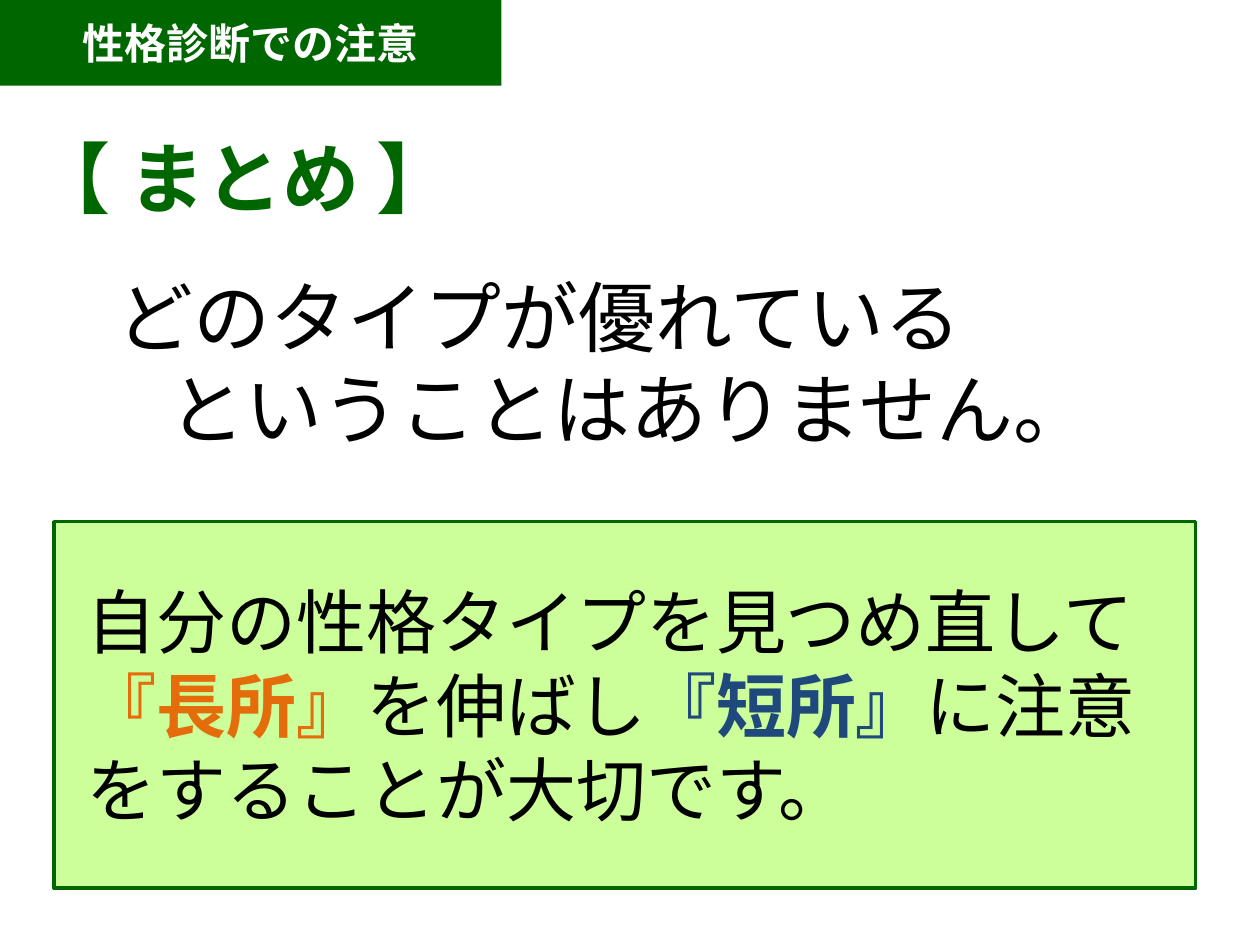
from lxml import etree
from pptx import Presentation
from pptx.dml.color import RGBColor
from pptx.enum.shapes import MSO_SHAPE
from pptx.enum.text import MSO_ANCHOR, MSO_AUTO_SIZE, PP_ALIGN
from pptx.oxml.ns import qn
from pptx.util import Inches, Pt

RECTANGLE = MSO_SHAPE.RECTANGLE
MIDDLE, TOP = MSO_ANCHOR.MIDDLE, MSO_ANCHOR.TOP
CENTER, LEFT = PP_ALIGN.CENTER, PP_ALIGN.LEFT
NO_AUTOFIT = MSO_AUTO_SIZE.NONE

FONT = "Noto Sans CJK JP"
COLORS = {
    "green": "006600",
    "pale": "CCFF99",
    "white": "FFFFFF",
    "black": "000000",
    "orange": "E46C0A",
    "blue": "1F497D",
}

# Content: each paragraph is a list of (text, color, bold)
TITLE = [[("性格診断での注意", "white", True)]]
HEADING = [[("【 まとめ 】", "green", True)]]
MESSAGE = [
    [("どのタイプが優れている", "black", False)],
    [("ということはありません。", "black", False)],
]
ADVICE = [
    [("自分の性格タイプを見つめ直して", "black", False)],
    [
        ("『長所』", "orange", True),
        ("を伸ばし", "black", False),
        ("『短所』", "blue", True),
        ("に注意をすることが大切です。", "black", False),
    ],
]


def color(name):
    return RGBColor.from_string(COLORS[name])


def place(shape, left, top, width, height):
    shape.left, shape.top = Inches(left), Inches(top)
    shape.width, shape.height = Inches(width), Inches(height)


def write(shape, paragraphs, size, align=LEFT, anchor=TOP, indents=()):
    """Fill a shape with paragraphs; indents gives left margins in inches."""
    frame = shape.text_frame
    frame.word_wrap = True
    frame.auto_size = NO_AUTOFIT
    frame.vertical_anchor = anchor
    for index, spans in enumerate(paragraphs):
        para = frame.add_paragraph() if index else frame.paragraphs[0]
        para.alignment = align
        if index < len(indents):
            para._p.get_or_add_pPr().set("marL", str(Inches(indents[index])))
        for text, color_name, bold in spans:
            span = para.add_run()
            span.text = text
            font = span.font
            font.size, font.bold, font.name = Pt(size), bold, FONT
            font.color.rgb = color(color_name)
            east_asian = etree.SubElement(span._r.get_or_add_rPr(), qn("a:ea"))
            east_asian.set("typeface", FONT)


def add_text(page, at, paragraphs, size, **layout):
    box = page.shapes.add_textbox(*map(Inches, at))
    write(box, paragraphs, size, **layout)


deck = Presentation()
deck.slide_width, deck.slide_height = Inches(10), Inches(7.5)
page = deck.slides.add_slide(deck.slide_layouts[5])

# Title band
title = page.shapes.title
place(title, 0, 0, 3.98, 0.68)
title.fill.solid()
title.fill.fore_color.rgb = color("green")
write(title, TITLE, 24, align=CENTER, anchor=MIDDLE)

# Heading and main message
add_text(page, (0.83, 2.09, 8.22, 1.58), MESSAGE, 44, indents=(0, 0.41))
add_text(page, (0.17, 0.99, 3.71, 0.84), HEADING, 44)

# Advice panel
panel = page.shapes.add_shape(RECTANGLE, 0, 0, 0, 0)
place(panel, 0.43, 4.14, 9.06, 2.91)
panel.shadow.inherit = False
panel.fill.solid()
panel.fill.fore_color.rgb = color("pale")
panel.line.color.rgb = color("green")
panel.line.width = Pt(2)
add_text(page, (0.59, 4.54, 8.74, 2.12), ADVICE, 40)

deck.save("out.pptx")
